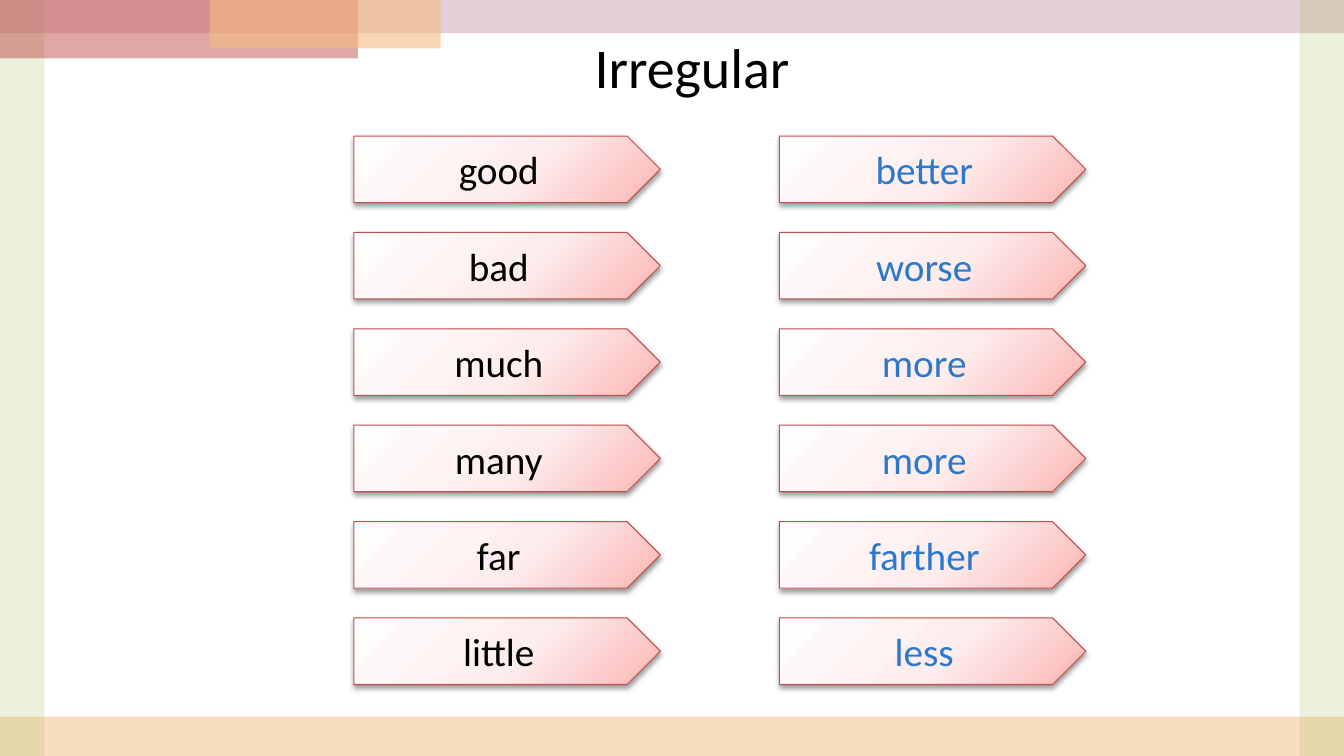
from pptx import Presentation
from pptx.dml.color import RGBColor
from pptx.enum.shapes import MSO_SHAPE
from pptx.enum.text import MSO_ANCHOR, MSO_AUTO_SIZE, PP_ALIGN
from pptx.oxml import parse_xml
from pptx.oxml.ns import nsdecls, qn
from pptx.util import Inches, Pt

BLACK, BLUE, RED = "000000", "2C78CC", "C0504D"
PEACH, MAUVE, GREEN = "F5BC83", "CC9EAC", "9BBB59"

# left, top, width, height in percent of the slide; colour; opacity in percent
BANDS = [
    (0, 94.8, 100, 5.2, PEACH, 50),
    (0, 0, 100, 4.4, MAUVE, 50),
    (0, 0, 3.3, 100, GREEN, 20),
    (0, 0, 26.63, 7.73, RED, 50),
    (15.6, 0, 17.18, 6.4, PEACH, 60),
    (96.7, 0, 3.3, 100, GREEN, 20),
]
COMPARISONS = [
    ("good", "better"),
    ("bad", "worse"),
    ("much", "more"),
    ("many", "more"),
    ("far", "farther"),
    ("little", "less"),
]


def rgb(hex_colour):
    return RGBColor.from_string(hex_colour)


class WordSlide:
    font_name = "Calibri"
    plate_left, plate_top = 26.33, 18
    column_step, row_step = 31.66, 12.75
    plate_width, plate_height = 22.8, 8.8
    plate_stops = [(0, "FFFEFE"), (55, "FDEDED"), (100, "FBB5B4")]

    def __init__(self, deck):
        self.deck = deck
        self.slide = deck.slides.add_slide(deck.slide_layouts[6])

    def box(self, left, top, width, height):
        """Turn percentages of the slide into lengths."""
        across, down = self.deck.slide_width / 100, self.deck.slide_height / 100
        return (round(left * across), round(top * down),
                round(width * across), round(height * down))

    def set_text(self, frame, text, size, colour, align):
        paragraph = frame.paragraphs[0]
        paragraph.text = text
        paragraph.alignment = align
        paragraph.font.name = self.font_name
        paragraph.font.size = Pt(size)
        paragraph.font.color.rgb = rgb(colour)

    def band(self, left, top, width, height, colour, opacity):
        band = self.slide.shapes.add_shape(
            MSO_SHAPE.RECTANGLE, *self.box(left, top, width, height))
        band.shadow.inherit = False
        band.line.fill.background()
        band.fill.solid()
        band.fill.fore_color.rgb = rgb(colour)
        tint = band.element.spPr.find(".//" + qn("a:srgbClr"))
        tint.append(parse_xml(f'<a:alpha {nsdecls("a")} val="{opacity * 1000}"/>'))

    def title(self, text):
        title = self.slide.shapes.add_textbox(*self.box(43.5, 3.6, 18.53, 10.27))
        title.text_frame.word_wrap = False
        title.text_frame.auto_size = MSO_AUTO_SIZE.SHAPE_TO_FIT_TEXT
        self.set_text(title.text_frame, text, 40, BLACK, PP_ALIGN.LEFT)

    def plate(self, column, row, word, colour):
        plate = self.slide.shapes.add_shape(MSO_SHAPE.PENTAGON, *self.box(
            self.plate_left + column * self.column_step,
            self.plate_top + row * self.row_step,
            self.plate_width, self.plate_height))
        plate.line.color.rgb = rgb(RED)
        plate.line.width = Pt(0.75)
        plate.shadow.inherit = False
        self.shade(plate.element.spPr)
        plate.text_frame.word_wrap = True
        plate.text_frame.vertical_anchor = MSO_ANCHOR.MIDDLE
        self.set_text(plate.text_frame, word, 28, colour, PP_ALIGN.CENTER)

    def shade(self, properties):
        """Add the radial gradient and the soft shadow below."""
        stops = "".join(
            f'<a:gs pos="{place * 1000}"><a:srgbClr val="{colour}"/></a:gs>'
            for place, colour in self.plate_stops)
        properties.find(qn("a:prstGeom")).addnext(parse_xml(
            f'<a:gradFill {nsdecls("a")} rotWithShape="1"><a:gsLst>{stops}</a:gsLst>'
            '<a:path path="circle"><a:fillToRect l="-40000" t="-90000" '
            'r="140000" b="190000"/></a:path></a:gradFill>'))
        properties.find(qn("a:effectLst")).append(parse_xml(
            f'<a:outerShdw {nsdecls("a")} blurRad="{Pt(4)}" dist="{Pt(2)}" '
            'dir="5400000" rotWithShape="0"><a:srgbClr val="000000">'
            '<a:alpha val="40000"/></a:srgbClr></a:outerShdw>'))


def main():
    deck = Presentation()
    deck.slide_width, deck.slide_height = Inches(13.33), Inches(7.5)
    page = WordSlide(deck)
    for band in BANDS:
        page.band(*band)
    page.title("Irregular")
    for row, (positive, comparative) in enumerate(COMPARISONS):
        page.plate(0, row, positive, BLACK)
        page.plate(1, row, comparative, BLUE)
    deck.save("out.pptx")


if __name__ == "__main__":
    main()
